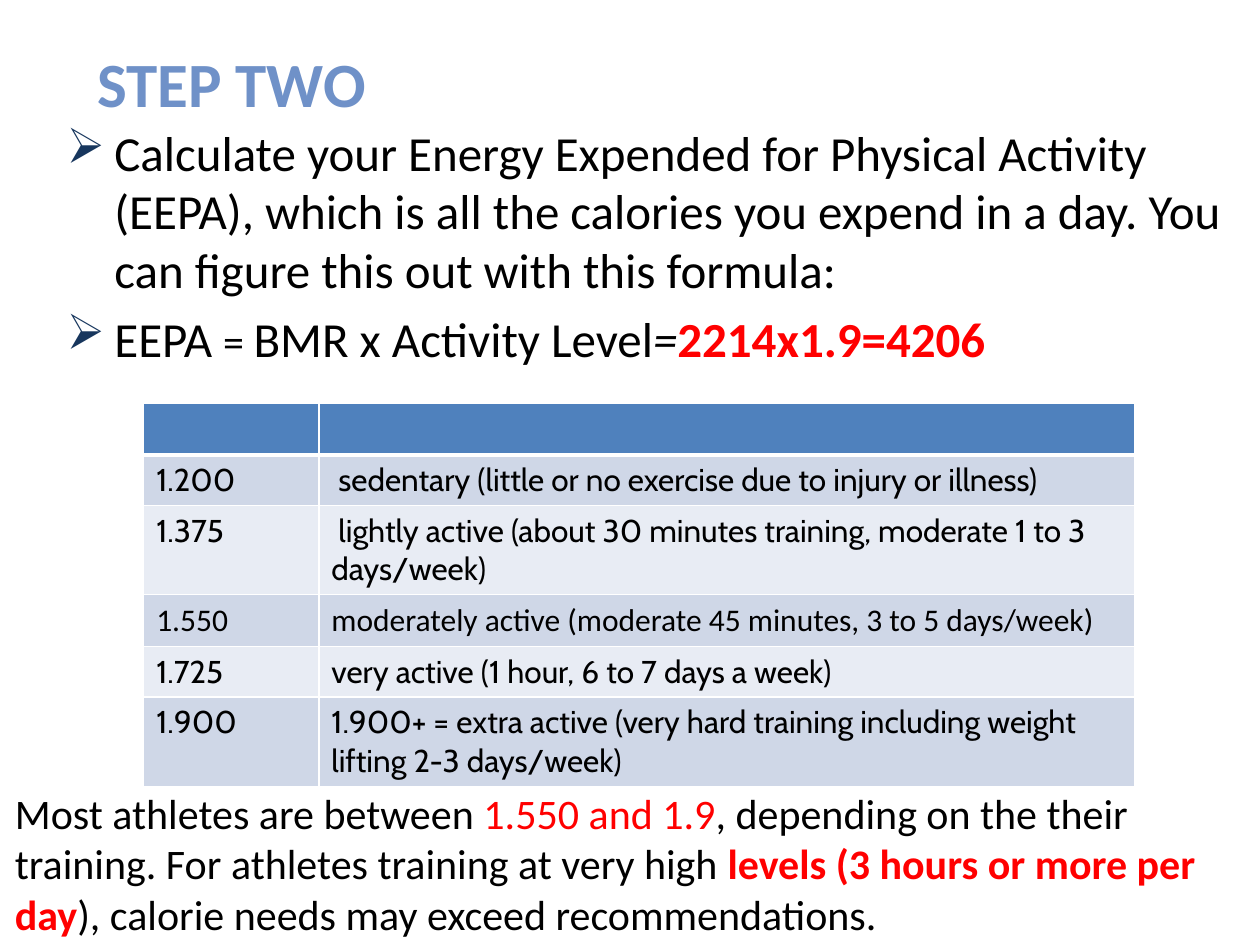
from lxml import etree
from pptx import Presentation
from pptx import util as u
from pptx.dml.color import RGBColor
from pptx.enum import text
from pptx.oxml import ns

BLACK = RGBColor(0x00, 0x00, 0x00)
RED = RGBColor(0xFF, 0x00, 0x00)
TITLE_BLUE = RGBColor(0x6F, 0x91, 0xC8)
HEADER_BLUE = RGBColor(0x4F, 0x81, 0xBD)
BANDS = [RGBColor(0xCF, 0xD7, 0xE7), RGBColor(0xE8, 0xEC, 0xF4)]
BULLET_NAVY = RGBColor(0x17, 0x36, 0x5D)
WHITE = RGBColor(0xFF, 0xFF, 0xFF)

# Content: each paragraph is a list of (text, font size, extra format)
TITLE = [("STEP TWO", 36, {"bold": True, "color": TITLE_BLUE})]
BULLETS = [
    [("Calculate your Energy Expended for Physical Activity (EEPA), which is all "
      "the calories you expend in a day. You can figure this out with this formula:",
      28, {})],
    [("EEPA ", 28, {}), ("= ", 24, {}), ("BMR x Activity Level", 28, {}),
     ("=", 28, {"italic": True}),
     ("2214x1.9=4206", 28, {"bold": True, "color": RED})],
]
NOTE = [
    ("Most athletes are between ", 24, {}),
    ("1.550 and 1.9", 24, {"color": RED}),
    (", depending on the their training. For athletes training at very high ", 24, {}),
    ("levels (3 hours or more per day", 24, {"bold": True, "color": RED}),
    ("), calorie needs may exceed recommendations.", 24, {}),
]
# Activity factor, description, font, row height
LEVELS = [
    ("", "", "Calibri", 0.41),
    ("1.200", " sedentary (little or no exercise due to injury or illness)",
     "Cabin", 0.4),
    ("1.375", " lightly active (about 30 minutes training, moderate 1 to 3 days/week)",
     "Cabin", 0.71),
    ("1.550", "moderately active (moderate 45 minutes, 3 to 5 days/week)",
     "Calibri", 0.41),
    ("1.725", "very active (1 hour, 6 to 7 days a week)", "Cabin", 0.4),
    ("1.900", "1.900+ = extra active (very hard training including weight lifting "
     "2-3 days/week)", "Cabin", 0.71),
]
COLUMNS = [1.39, 6.48]


def place(shape, *box):
    for name, value in zip(("left", "top", "width", "height"), box):
        setattr(shape, name, u.Inches(value))


def add_runs(p, runs, font="Calibri"):
    for words, size, extra in runs:
        r = p.add_run()
        r.text = words
        style = {"name": font, "size": u.Pt(size), "color": BLACK, **extra}
        r.font.color.rgb = style.pop("color")
        for key, value in style.items():
            setattr(r.font, key, value)


def add_text(s, *box):
    sp = s.shapes.add_textbox(*map(u.Inches, box))
    sp.text_frame.word_wrap = True
    return sp.text_frame


def add_arrow_bullet(p, color, indent):
    pPr = p._p.get_or_add_pPr()
    pPr.set("marL", str(u.Inches(indent)))
    pPr.set("indent", str(-u.Inches(indent)))
    clr = etree.SubElement(pPr, ns.qn("a:buClr"))
    etree.SubElement(clr, ns.qn("a:srgbClr"), val=str(color))
    # In this symbol font, Ø is the arrowhead
    etree.SubElement(pPr, ns.qn("a:buFont"), typeface="Wingdings",
                     pitchFamily="2", charset="2")
    etree.SubElement(pPr, ns.qn("a:buChar"), char="Ø")


def add_borders(cell, bottom):
    tcPr = cell._tc.get_or_add_tcPr()
    for side, width in zip("LRTB", (1, 1, 1, bottom)):
        ln = etree.SubElement(tcPr, ns.qn(f"a:ln{side}"), w=str(u.Pt(width)))
        fill = etree.SubElement(ln, ns.qn("a:solidFill"))
        etree.SubElement(fill, ns.qn("a:srgbClr"), val=str(WHITE))


def main():
    prs = Presentation()
    prs.slide_width, prs.slide_height = u.Inches(10), u.Inches(7.5)
    s = prs.slides.add_slide(prs.slide_layouts[5])

    # Title
    place(s.shapes.title, 0.67, 0.03, 8.19, 1.25)
    tf = s.shapes.title.text_frame
    tf.auto_size = text.MSO_AUTO_SIZE.NONE
    tf.vertical_anchor = text.MSO_ANCHOR.MIDDLE
    p = tf.paragraphs[0]
    p.alignment = text.PP_ALIGN.LEFT
    add_runs(p, TITLE)

    # Formula bullets
    tf = add_text(s, 0.43, 0.92, 9.57, 5.78)
    for i, runs in enumerate(BULLETS):
        p = tf.add_paragraph() if i else tf.paragraphs[0]
        add_arrow_bullet(p, BULLET_NAVY, 0.38)
        if i:
            p.space_before = u.Pt(5.6)
        add_runs(p, runs)

    # Activity level table
    heights = [level[-1] for level in LEVELS]
    frame = s.shapes.add_table(len(LEVELS), len(COLUMNS), u.Inches(1.14), u.Inches(3.2),
                               u.Inches(sum(COLUMNS)), u.Inches(sum(heights)))
    table = frame.table
    for column, width in zip(table.columns, COLUMNS):
        column.width = u.Inches(width)
    for i, (*words, font, height) in enumerate(LEVELS):
        table.rows[i].height = u.Inches(height)
        for cell, label in zip(table.rows[i].cells, words):
            add_borders(cell, 1 if i else 3)
            cell.fill.solid()
            cell.fill.fore_color.rgb = BANDS[(i - 1) % 2] if i else HEADER_BLUE
            if label:
                add_runs(cell.text_frame.paragraphs[0], [(label, 18, {})], font)

    # Closing note
    tf = add_text(s, 0.02, 6.2, 10, 1.31)
    add_runs(tf.paragraphs[0], NOTE)

    prs.save("out.pptx")


if __name__ == "__main__":
    main()
